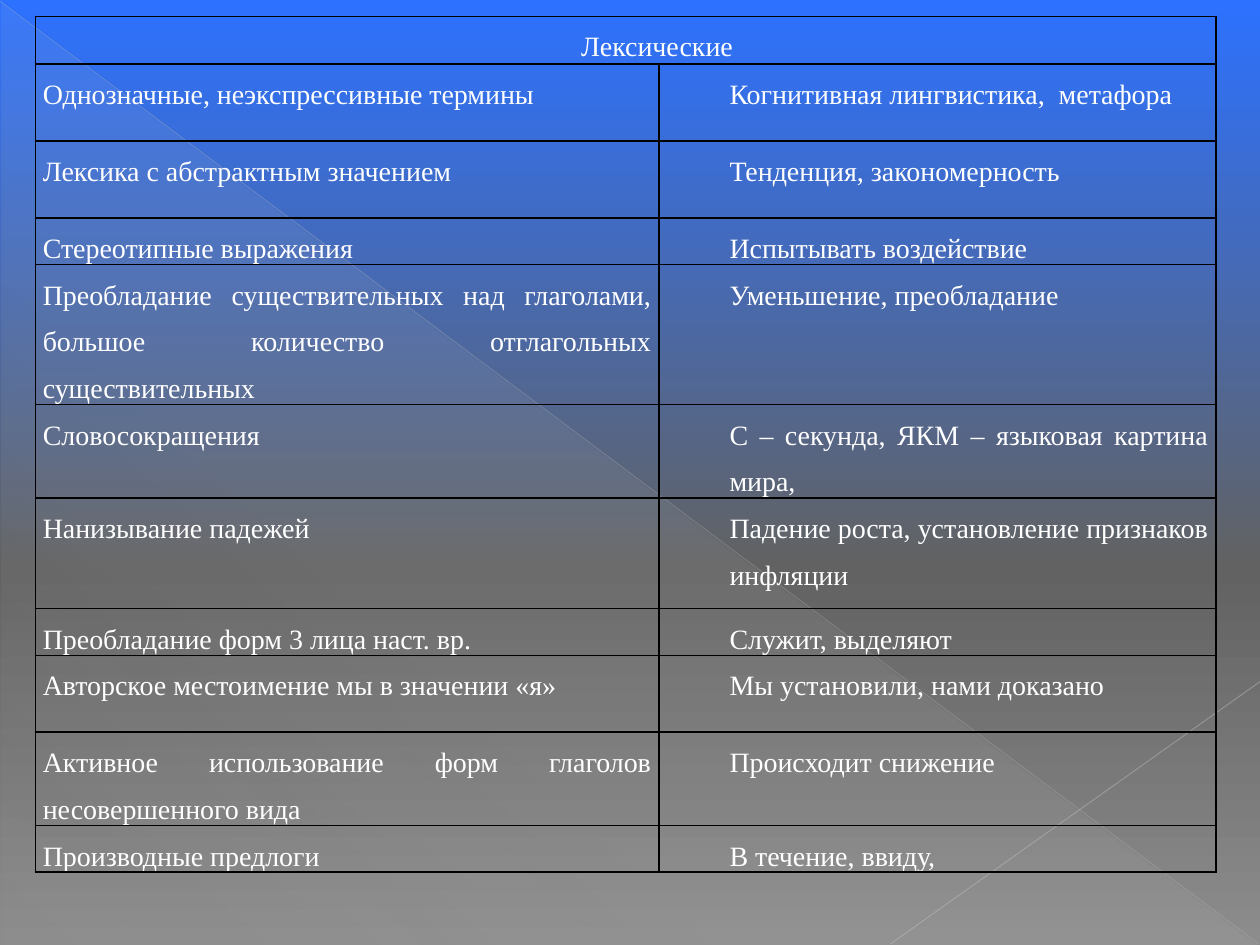
import dataclasses

import pptx
import pptx.dml.color
import pptx.enum.shapes
import pptx.enum.text
import pptx.oxml.ns
import pptx.oxml.xmlchemy
import pptx.util

Inches = pptx.util.Inches
Pt = pptx.util.Pt
qn = pptx.oxml.ns.qn
ALIGN = pptx.enum.text.PP_ALIGN


@dataclasses.dataclass(frozen=True)
class Theme:
    font: str = "Times New Roman"
    text_size: float = 16
    text: str = "FFFFFF"
    border: str = "000000"
    border_width: float = 1
    # Gradient stops: position %, colour, opacity %
    background: tuple = ((0, "2C71FF", 100), (60, "626262", 100), (100, "8C8C8C", 100))
    triangle: tuple = ((0, "D2D2D2", 10), (70, "D2D2D2", 8), (100, "D2D2D2", 1))
    long_line: str = "BFBFBF"
    short_line: str = "C6C6C6"


HEADING = "Лексические"
ROWS = [
    (0.61, "Однозначные, неэкспрессивные термины", "Когнитивная лингвистика,  метафора"),
    (0.61, "Лексика с абстрактным значением", "Тенденция, закономерность"),
    (0.3, "Стереотипные выражения", "Испытывать воздействие"),
    (0.91, "Преобладание существительных над глаголами, большое количество "
           "отглагольных существительных", "Уменьшение, преобладание"),
    (0.61, "Словосокращения", "С – секунда, ЯКМ – языковая картина мира,"),
    (0.88, "Нанизывание падежей", "Падение роста, установление признаков инфляции"),
    (0.3, "Преобладание форм 3 лица наст. вр.", "Служит, выделяют"),
    (0.61, "Авторское местоимение мы в значении «я»", "Мы установили, нами доказано"),
    (0.61, "Активное использование форм глаголов несовершенного вида", "Происходит снижение"),
    (0.3, "Производные предлоги", "В течение, ввиду,"),
]
HEADING_HEIGHT = 0.38
COLUMN_WIDTHS = (4.95, 4.42)


def add_node(parent, tag, **attributes):
    node = pptx.oxml.xmlchemy.OxmlElement(tag)
    for name, value in attributes.items():
        node.set(name, str(value))
    parent.append(node)
    return node


def add_opacity(color_node, percent):
    if percent < 100:
        add_node(color_node, "a:alpha", val=percent * 1000)


class SlideBuilder:
    def __init__(self, slide, theme):
        self.slide = slide
        self.theme = theme

    def gradient(self, fill, element, stops, angle):
        """Fill with any number of stops; angle runs clockwise in degrees."""
        fill.gradient()
        gradient = next(element.iter(qn("a:gradFill")))
        for child in list(gradient):
            gradient.remove(child)
        stop_list = add_node(gradient, "a:gsLst")
        for position, color, opacity in stops:
            stop = add_node(stop_list, "a:gs", pos=position * 1000)
            add_opacity(add_node(stop, "a:srgbClr", val=color), opacity)
        add_node(gradient, "a:lin", ang=angle * 60000, scaled=0)

    def background(self):
        self.gradient(self.slide.background.fill, self.slide.element,
                      self.theme.background, 90)

    def triangle(self, left, top, width, height):
        shape = self.slide.shapes.add_shape(
            pptx.enum.shapes.MSO_SHAPE.RIGHT_TRIANGLE,
            Inches(left), Inches(top), Inches(width), Inches(height))
        shape.shadow.inherit = False
        shape.line.fill.background()
        self.gradient(shape.fill, shape.element, self.theme.triangle, 133)

    def line(self, start, end, color, width, opacity):
        connector = self.slide.shapes.add_connector(
            pptx.enum.shapes.MSO_CONNECTOR.STRAIGHT,
            *(Inches(value) for value in start + end))
        connector.line.width = Pt(width)
        connector.line.color.rgb = pptx.dml.color.RGBColor.from_string(color)
        add_opacity(next(connector.element.iter(qn("a:srgbClr"))), opacity)
        add_node(connector.element.spPr, "a:effectLst")

    def cell_borders(self, cell):
        properties = cell._tc.get_or_add_tcPr()
        for index, side in enumerate(("a:lnL", "a:lnR", "a:lnT", "a:lnB")):
            border = add_node(properties, side, w=Pt(self.theme.border_width))
            add_node(add_node(border, "a:solidFill"), "a:srgbClr", val=self.theme.border)
            properties.insert(index, border)

    def cell(self, cell, text="", alignment=ALIGN.JUSTIFY, indent=0):
        cell.margin_left = cell.margin_right = Inches(0.06)
        cell.margin_top = cell.margin_bottom = 0
        cell.fill.background()
        self.cell_borders(cell)
        paragraph = cell.text_frame.paragraphs[0]
        paragraph.text = text
        paragraph.alignment = alignment
        paragraph.line_spacing = 1.5
        paragraph.space_before = Pt(12)
        properties = paragraph._p.get_or_add_pPr()
        properties.set("marL", str(Inches(indent)))
        properties.set("indent", "0")
        font = paragraph.font
        font.name = self.theme.font
        font.size = Pt(self.theme.text_size)
        font.bold = False
        font.color.rgb = pptx.dml.color.RGBColor.from_string(self.theme.text)

    def table(self, left, top):
        heights = [HEADING_HEIGHT] + [row[0] for row in ROWS]
        table = self.slide.shapes.add_table(
            len(heights), len(COLUMN_WIDTHS), Inches(left), Inches(top),
            Inches(sum(COLUMN_WIDTHS)), Inches(sum(heights))).table
        table.first_row = table.horz_banding = False
        for column, width in zip(table.columns, COLUMN_WIDTHS):
            column.width = Inches(width)
        for row, height in zip(table.rows, heights):
            row.height = Inches(height)
        table.cell(0, 0).merge(table.cell(0, 1))
        self.cell(table.cell(0, 0), HEADING, ALIGN.CENTER, 0.5)
        self.cell(table.cell(0, 1))
        for index, (_, feature, example) in enumerate(ROWS, start=1):
            self.cell(table.cell(index, 0), feature)
            self.cell(table.cell(index, 1), example, indent=0.5)


def main():
    presentation = pptx.Presentation()
    presentation.slide_width = Inches(10)
    presentation.slide_height = Inches(7.5)
    theme = Theme()
    builder = SlideBuilder(
        presentation.slides.add_slide(presentation.slide_layouts[6]), theme)
    builder.background()
    builder.triangle(0.01, 0.02, 9.98, 7.48)
    builder.line((0, 0.01), (9.99, 7.49), theme.long_line, 0.39, 35)
    builder.line((10, 5.41), (7.07, 7.49), theme.short_line, 0.47, 45)
    builder.table(0.28, 0.13)
    presentation.save("out.pptx")


if __name__ == "__main__":
    main()
